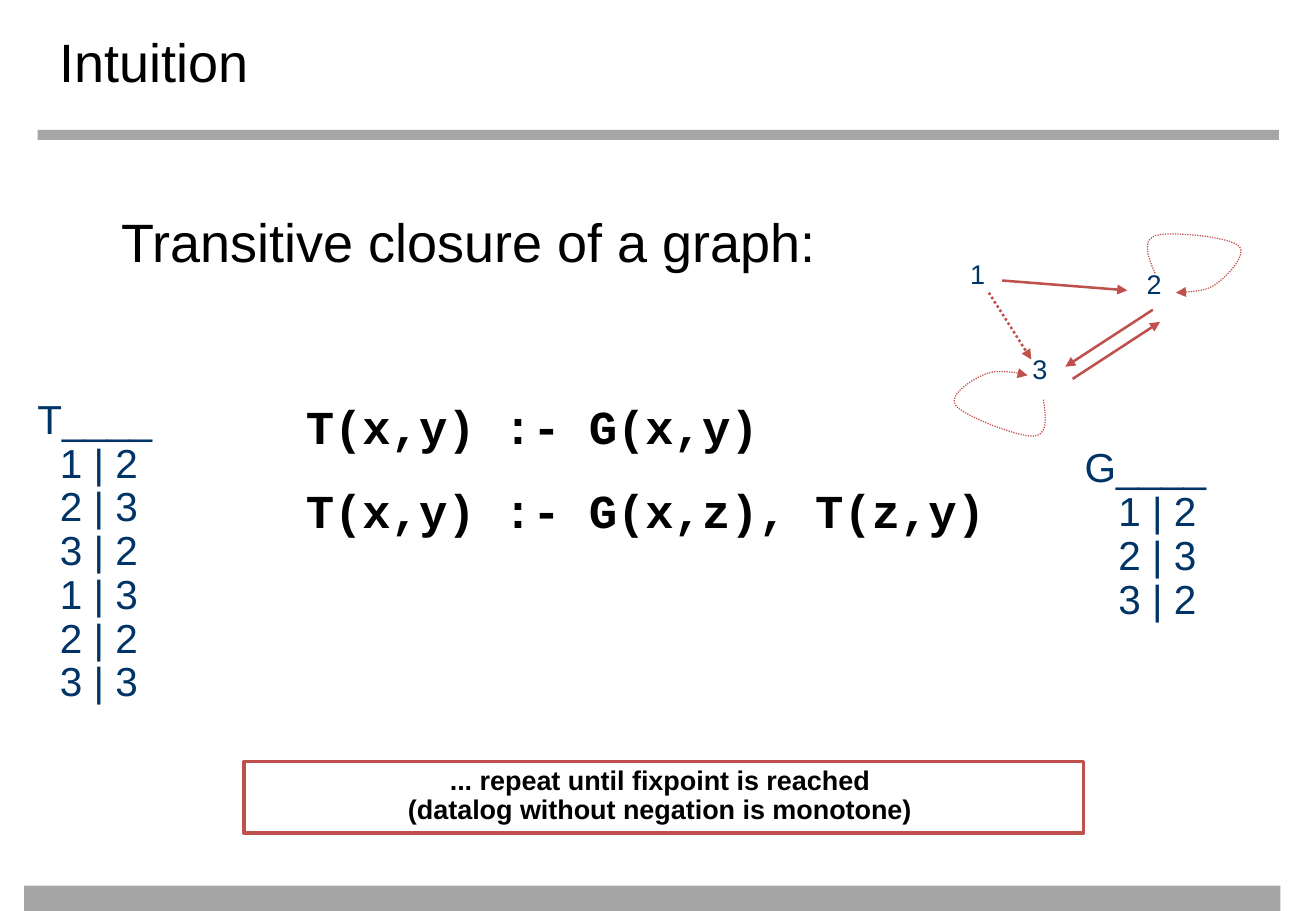
from pptx import Presentation
from pptx.dml.color import RGBColor
from pptx.enum.dml import MSO_LINE
from pptx.enum.shapes import MSO_CONNECTOR, MSO_SHAPE
from pptx.enum.text import MSO_ANCHOR, MSO_AUTO_SIZE, PP_ALIGN
from pptx.oxml.ns import qn
from pptx.util import Pt
from lxml.etree import SubElement

BLACK = RGBColor(0x00, 0x00, 0x00)
NAVY = RGBColor(0x00, 0x33, 0x66)
RED = RGBColor(0xC0, 0x50, 0x4D)
GRAY = RGBColor(0xA6, 0xA6, 0xA6)

NODES = {"1": (6, 14.2), "2": (110.5, 20), "3": (42.8, 70.4)}
EDGES = [
    ((32, 29.3), (106.2, 35.1), False),
    ((121.3, 46.6), (69.4, 80.4), False),
    ((73.8, 87.6), (125.6, 53.8), False),
    ((24.1, 36.5), (49.3, 76.1), True),
]
LOOPS = [
    [(122.7, 25), (118.4, 15.6), (114.8, 5.6), (122.7, 2.7), (131.4, -0.2),
     (165.9, 3.4), (171.7, 8.4), (178.2, 12.8), (165.9, 26.4), (159.4, 30.8),
     (153.7, 35.8), (144.3, 35.8), (135, 36.5)],
    [(56.5, 99.9), (57.9, 110), (59.4, 120.8), (50.7, 121.5), (41.4, 122.2),
     (9, 109.2), (4.6, 103.5), (-0.4, 97), (14.7, 87.6), (21.9, 84.8),
     (29.1, 81.9), (38.5, 83.3), (47.1, 85.5)],
]


def points(box):
    return [Pt(value) for value in box]


def write(frame, text, first=False, font="Arial", size=24, color=BLACK, bold=False,
          align=PP_ALIGN.LEFT, spacing=0.9, before=0, indent=0):
    paragraph = frame.paragraphs[0] if first else frame.add_paragraph()
    paragraph.alignment = align
    paragraph.line_spacing = spacing
    paragraph.space_before = Pt(before)
    properties = paragraph._p.get_or_add_pPr()
    properties.set("marL", str(Pt(indent)))
    properties.set("indent", "0")
    SubElement(properties, qn("a:buNone"))
    run = paragraph.add_run()
    run.text = text
    run.font.name = font
    run.font.size = Pt(size)
    run.font.bold = bold
    run.font.color.rgb = color


def place(shape, box):
    shape.left, shape.top, shape.width, shape.height = points(box)
    shape.text_frame.auto_size = MSO_AUTO_SIZE.NONE
    return shape.text_frame


def add_bar(slide, box):
    bar = slide.shapes.add_shape(MSO_SHAPE.RECTANGLE, *points(box))
    bar.shadow.inherit = False
    bar.fill.solid()
    bar.fill.fore_color.rgb = GRAY
    bar.line.fill.background()


def add_title(slide, box, text):
    frame = place(slide.shapes.title, box)
    frame.margin_left = frame.margin_right = Pt(5)
    frame.margin_top = frame.margin_bottom = Pt(2)
    frame.vertical_anchor = MSO_ANCHOR.MIDDLE
    write(frame, text, first=True, size=32, spacing=0.92)


def add_rules(slide, box, heading, rules):
    frame = place(slide.placeholders[1], box)
    frame.vertical_anchor = MSO_ANCHOR.TOP
    write(frame, heading, first=True, size=32, spacing=1.0)
    for index, rule in enumerate(rules):
        write(frame, rule, font="Courier New", size=28, bold=True, spacing=1.0,
              before=16.3 if index else 73, indent=109.3)


def add_relation(slide, box, name, pairs, indent):
    frame = slide.shapes.add_textbox(*points(box)).text_frame
    frame.word_wrap = True
    write(frame, f"{name}____", first=True, color=NAVY)
    for left, right in pairs:
        write(frame, f"{left} | {right}", color=NAVY, indent=indent)


def add_callout(slide, box, lines):
    callout = slide.shapes.add_shape(MSO_SHAPE.RECTANGLE, *points(box))
    callout.shadow.inherit = False
    callout.fill.background()
    callout.line.color.rgb = RED
    callout.line.width = Pt(2.25)
    frame = callout.text_frame
    frame.word_wrap = True
    frame.margin_right = Pt(11.6)
    frame.vertical_anchor = MSO_ANCHOR.TOP
    for index, line in enumerate(lines):
        write(frame, line, first=index == 0, size=16, bold=True, align=PP_ALIGN.CENTER)


def style_arrow(shape, width, dotted):
    shape.line.color.rgb = RED
    shape.line.width = Pt(width)
    if dotted:
        shape.line.dash_style = MSO_LINE.ROUND_DOT
    properties = shape._element.spPr
    SubElement(properties.find(qn("a:ln")), qn("a:tailEnd"), type="triangle")
    SubElement(properties, qn("a:effectLst"))


def bezier(start, control, second, end, t):
    s = 1 - t
    return [s**3 * a + 3 * s * s * t * b + 3 * s * t * t * c + t**3 * d
            for a, b, c, d in zip(start, control, second, end)]


def add_graph(slide, box):
    left, top = box[:2]
    steps = 12
    shapes = slide.shapes.add_group_shape().shapes

    def locate(point):
        return Pt(left + point[0]), Pt(top + point[1])

    for name, corner in NODES.items():
        label = shapes.add_textbox(*locate(corner), Pt(23.8), Pt(25.2))
        label.text_frame.word_wrap = False
        write(label.text_frame, name, first=True, size=16, color=NAVY)
    for start, end, dotted in EDGES:
        edge = shapes.add_connector(MSO_CONNECTOR.STRAIGHT, *locate(start), *locate(end))
        style_arrow(edge, 1.5, dotted)
    for loop in LOOPS:
        curve = [locate(bezier(*loop[first:first + 4], step / steps))
                 for first in range(0, len(loop) - 1, 3) for step in range(1, steps + 1)]
        builder = shapes.build_freeform(*locate(loop[0]))
        builder.add_line_segments(curve, close=False)
        outline = builder.convert_to_shape()
        outline.fill.background()
        style_arrow(outline, 0.75, True)


def main():
    presentation = Presentation()
    presentation.slide_width, presentation.slide_height = Pt(780), Pt(540)
    slide = presentation.slides.add_slide(presentation.slide_layouts[1])
    add_bar(slide, (14.4, 525, 744.5, 15))
    add_bar(slide, (22.3, 77, 735.8, 6))
    add_title(slide, (30.2, 18, 720, 40.3), "Intuition")
    add_rules(slide, (64.8, 120.2, 663.8, 324), "Transitive closure of a graph:",
              ["T(x,y) :- G(x,y)", "T(x,y) :- G(x,z), T(z,y)"])
    graph_pairs = [(1, 2), (2, 3), (3, 2)]
    closure_pairs = graph_pairs + [(1, 3), (2, 2), (3, 3)]
    add_relation(slide, (635.8, 262, 100, 113), "G", graph_pairs, 20)
    add_relation(slide, (15.1, 233.3, 100, 191.5), "T", closure_pairs, 13.3)
    add_callout(slide, (144.7, 451.4, 497.5, 42.5),
                ["... repeat until fixpoint is reached", "(datalog without negation is monotone)"])
    add_graph(slide, (562, 137, 178, 122))
    presentation.save("out.pptx")


if __name__ == "__main__":
    main()
